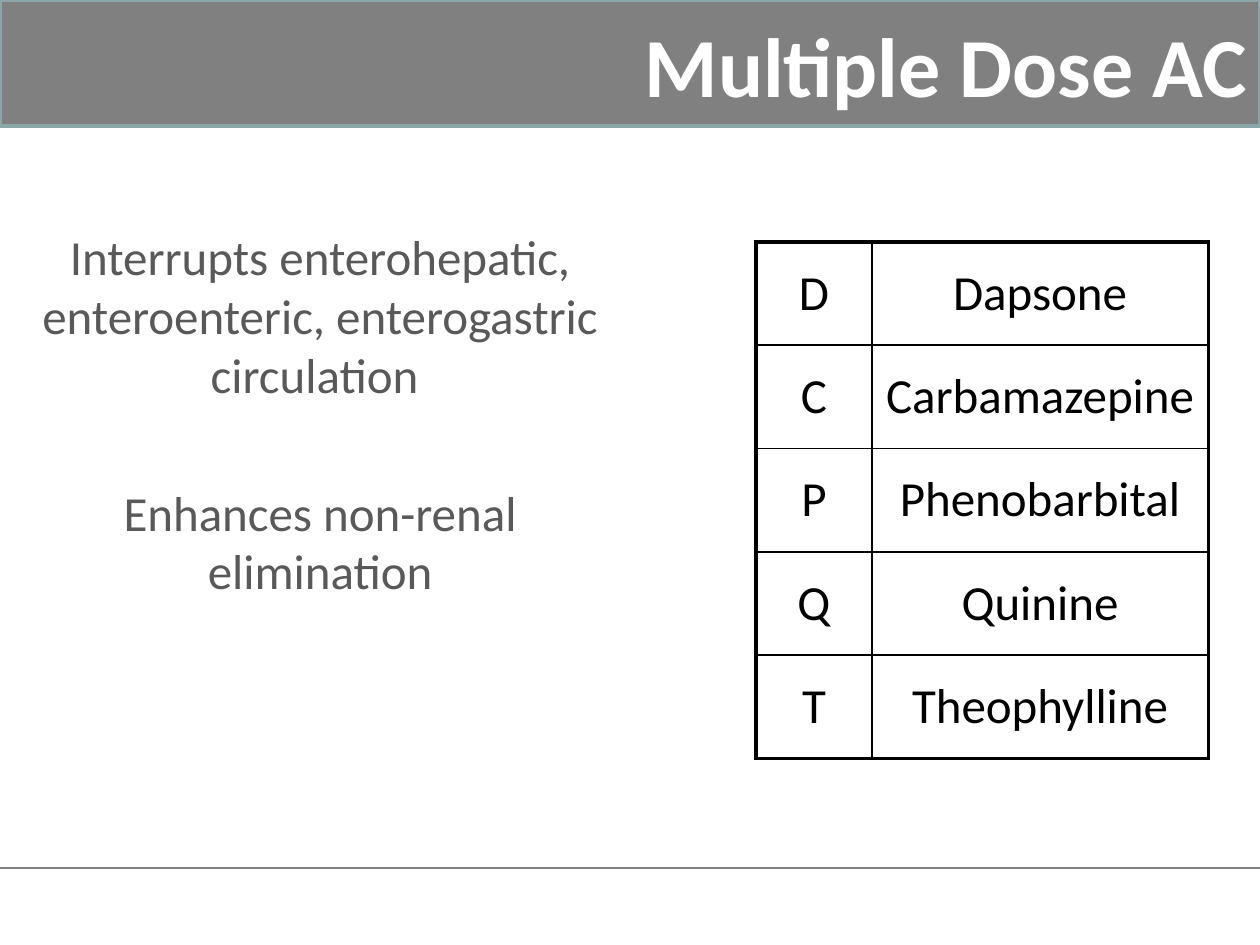
from lxml.etree import SubElement
from pptx import Presentation
from pptx.dml.color import RGBColor
from pptx.enum.shapes import MSO_CONNECTOR, MSO_SHAPE
from pptx.enum.text import MSO_ANCHOR, MSO_AUTO_SIZE, PP_ALIGN
from pptx.oxml.ns import qn
from pptx.util import Inches, Pt

COLORS = {
    "band": "808080",
    "band_edge": "8AA6A8",
    "title": "FFFFFF",
    "body": "595959",
    "table": "000000",
}
DRUGS = ["Dapsone", "Carbamazepine", "Phenobarbital", "Quinine", "Theophylline"]
INITIALS = ["D", "C", "P", "Q", "T"]
BODY = [
    "Interrupts enterohepatic, enteroenteric, enterogastric circulation ",
    "Enhances non-renal elimination",
]


class SlideBuilder:
    font_name = "Calibri"
    text_size = 28
    outer_border = 2.25
    inner_border = 1

    def __init__(self, slide):
        self.slide = slide

    def color(self, name):
        return RGBColor.from_string(COLORS[name])

    def format_paragraph(self, paragraph, color, alignment, size=text_size, bold=False):
        paragraph.alignment = alignment
        font = paragraph.font
        font.name = self.font_name
        font.size = Pt(size)
        font.bold = bold
        font.color.rgb = self.color(color)

    def place(self, shape, left, top, width, height):
        shape.left, shape.top = Inches(left), Inches(top)
        shape.width, shape.height = Inches(width), Inches(height)
        shape.text_frame.auto_size = MSO_AUTO_SIZE.NONE

    def band(self, left, top, width, height):
        """Add the title band behind everything else."""
        shape = self.slide.shapes.add_shape(
            MSO_SHAPE.RECTANGLE, Inches(left), Inches(top), Inches(width), Inches(height)
        )
        shape.shadow.inherit = False
        shape.fill.solid()
        shape.fill.fore_color.rgb = self.color("band")
        shape.line.color.rgb = self.color("band_edge")
        shape.line.width = Pt(2)
        shape.element.getparent().insert(2, shape.element)

    def rule(self, left, top, right):
        line = self.slide.shapes.add_connector(
            MSO_CONNECTOR.STRAIGHT, Inches(left), Inches(top), Inches(right), Inches(top)
        )
        line.line.color.rgb = self.color("band")
        line.line.width = Pt(1.5)
        SubElement(line.element.spPr, qn("a:effectLst"))

    def title(self, text, *box):
        shape = self.slide.shapes.title
        self.place(shape, *box)
        shape.text_frame.text = text
        shape.text_frame.vertical_anchor = MSO_ANCHOR.MIDDLE
        self.format_paragraph(
            shape.text_frame.paragraphs[0], "title", PP_ALIGN.RIGHT, size=48, bold=True
        )

    def body(self, texts, *box):
        shape = self.slide.placeholders[1]
        self.place(shape, *box)
        shape.text_frame.text = "\n".join(texts)
        for index, paragraph in enumerate(shape.text_frame.paragraphs):
            properties = paragraph._p.get_or_add_pPr()
            properties.set("marL", "0")
            properties.set("indent", "0")
            SubElement(properties, qn("a:buNone"))
            paragraph.space_before = Pt(45 if index else 0)
            self.format_paragraph(paragraph, "body", PP_ALIGN.CENTER)

    def border(self, cell, side, width):
        properties = cell._tc.get_or_add_tcPr()
        line = SubElement(properties, qn(f"a:ln{side}"), w=str(Pt(width)))
        fill = SubElement(line, qn("a:solidFill"))
        SubElement(fill, qn("a:srgbClr"), val=COLORS["table"])

    def table(self, rows, left, top, column_widths, row_height):
        table = self.slide.shapes.add_table(
            len(rows), len(column_widths), Inches(left), Inches(top),
            Inches(sum(column_widths)), Inches(row_height * len(rows)),
        ).table
        table.first_row = table.horz_banding = False
        for column, width in zip(table.columns, column_widths):
            column.width = Inches(width)
        last_row, last_column = len(rows) - 1, len(column_widths) - 1
        for row_index, texts in enumerate(rows):
            table.rows[row_index].height = Inches(row_height)
            for column_index, text in enumerate(texts):
                cell = table.cell(row_index, column_index)
                cell.text = text
                cell.vertical_anchor = MSO_ANCHOR.MIDDLE
                self.format_paragraph(
                    cell.text_frame.paragraphs[0], "table", PP_ALIGN.CENTER
                )
                outer_sides = {
                    "L": column_index == 0,
                    "R": column_index == last_column,
                    "T": row_index == 0,
                    "B": row_index == last_row,
                }
                for side, outer in outer_sides.items():
                    self.border(cell, side, self.outer_border if outer else self.inner_border)
                cell.fill.background()


def main():
    presentation = Presentation()
    presentation.slide_width = Inches(10)
    presentation.slide_height = Inches(7.5)
    builder = SlideBuilder(presentation.slides.add_slide(presentation.slide_layouts[1]))
    builder.band(0, 0, 10, 1)
    builder.rule(0, 6.89, 10)
    builder.body(BODY, 0, 1.75, 5.08, 4.95)
    builder.table(list(zip(INITIALS, DRUGS)), 6, 1.92, [0.92, 2.67], 0.82)
    builder.title("Multiple Dose AC", 2.08, 0.02, 7.92, 0.98)
    presentation.save("out.pptx")


if __name__ == "__main__":
    main()
